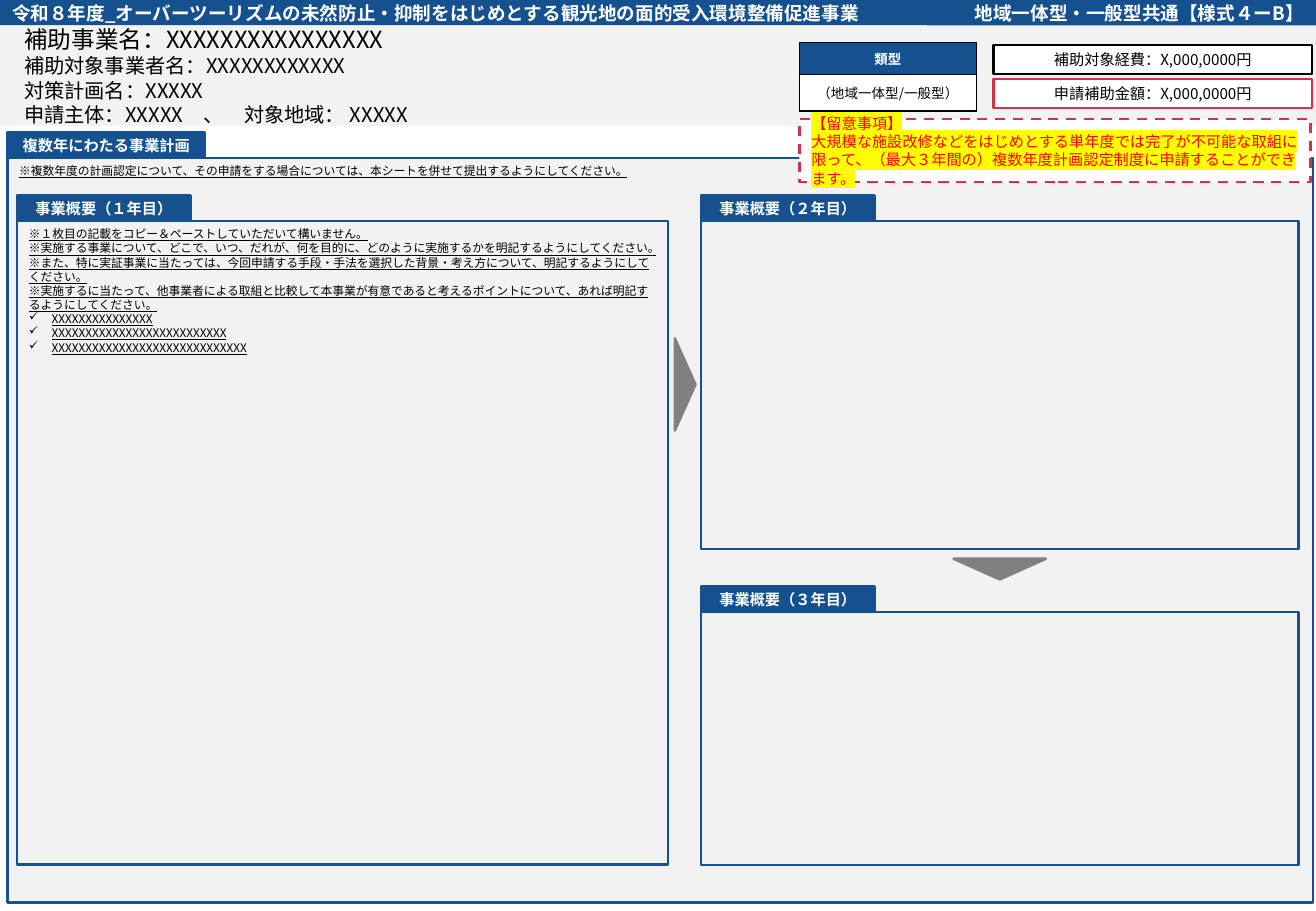
"""Build the multi-year project plan form as a single slide."""
from dataclasses import dataclass

from lxml import etree
from pptx import Presentation
from pptx.dml.color import RGBColor
from pptx.enum.dml import MSO_LINE
from pptx.enum.shapes import MSO_SHAPE
from pptx.enum.text import MSO_ANCHOR, MSO_AUTO_SIZE, PP_ALIGN
from pptx.oxml.ns import qn
from pptx.util import Pt

RECTANGLE, TRIANGLE = MSO_SHAPE.RECTANGLE, MSO_SHAPE.ISOSCELES_TRIANGLE
LEFT, CENTER, RIGHT = PP_ALIGN.LEFT, PP_ALIGN.CENTER, PP_ALIGN.RIGHT
TOP, MIDDLE = MSO_ANCHOR.TOP, MSO_ANCHOR.MIDDLE
NO_AUTOFIT, DASH = MSO_AUTO_SIZE.NONE, MSO_LINE.DASH


@dataclass(frozen=True)
class Theme:
    font: str = "Noto Sans CJK JP"
    navy: str = "14518E"
    panel: str = "F2F2F2"
    white: str = "FFFFFF"
    black: str = "000000"
    crimson: str = "D1314A"
    red: str = "FF0000"
    yellow: str = "FFFF00"
    arrow: str = "808080"
    lead: float = 14
    detail: float = 12
    header: float = 11
    label: float = 9
    table: float = 8
    note: float = 7
    leading: float = 1.2
    outline: float = 1.5


THEME = Theme()
deck = Presentation()
deck.slide_width, deck.slide_height = Pt(780), Pt(540)
slide = deck.slides.add_slide(deck.slide_layouts[5])


def write(frame, text, size=THEME.label, color=THEME.black, bold=False, underline=False,
          align=LEFT, first_indent=0, bullet=None, highlight=None, fixed_leading=True):
    """Append one formatted paragraph to a text frame."""
    paragraph = frame.add_paragraph() if frame.text else frame.paragraphs[0]
    paragraph.alignment = align
    if fixed_leading:
        paragraph.line_spacing = Pt(size * THEME.leading)
    properties = paragraph._p.get_or_add_pPr()
    if first_indent:
        properties.set("indent", str(Pt(first_indent)))
    if bullet:
        properties.set("marL", str(Pt(13.5)))
        properties.set("indent", str(Pt(-13.5)))
        etree.SubElement(properties, qn("a:buChar")).set("char", bullet)
    run = paragraph.add_run()
    run.text = text
    font = run.font
    font.size, font.bold, font.underline, font.name = Pt(size), bold, underline, THEME.font
    font.color.rgb = RGBColor.from_string(color)
    latin = run._r.rPr.find(qn("a:latin"))
    east_asian = etree.Element(qn("a:ea"), typeface=THEME.font)
    latin.addnext(east_asian)
    if highlight:
        marker = etree.Element(qn("a:highlight"))
        etree.SubElement(marker, qn("a:srgbClr")).set("val", highlight)
        latin.addprevious(marker)


def box(left, top, width, height, fill, line=None, line_width=THEME.outline,
        anchor=MIDDLE, kind=RECTANGLE):
    """Add a filled shape ready for text."""
    shape = slide.shapes.add_shape(kind, Pt(left), Pt(top), Pt(width), Pt(height))
    shape.shadow.inherit = False
    shape.fill.solid()
    shape.fill.fore_color.rgb = RGBColor.from_string(fill)
    if line:
        shape.line.color.rgb = RGBColor.from_string(line)
        shape.line.width = Pt(line_width)
    else:
        shape.line.fill.background()
    frame = shape.text_frame
    frame.word_wrap, frame.vertical_anchor = True, anchor
    frame.margin_top = frame.margin_bottom = Pt(3.6 if anchor == TOP else 0)
    return shape


band_height = 15.12
title = slide.shapes.title
title.left, title.top, title.width, title.height = Pt(0), Pt(0), Pt(780), Pt(band_height)
title.fill.solid()
title.fill.fore_color.rgb = RGBColor.from_string(THEME.navy)
title_frame = title.text_frame
title_frame.auto_size, title_frame.word_wrap = NO_AUTOFIT, True
title_frame.vertical_anchor = MIDDLE
title_frame.margin_top = title_frame.margin_bottom = Pt(0)
write(title_frame, "令和８年度_オーバーツーリズムの未然防止・抑制をはじめとする観光地の面的受入環境整備促進事業",
      size=THEME.header, color=THEME.white, bold=True)

form_name = box(550, 0, 230, band_height, THEME.navy, THEME.navy, 0.75)
write(form_name.text_frame, "地域一体型・一般型共通【様式４ーB】",
      size=THEME.header, color=THEME.white, bold=True, align=RIGHT)

applicant = box(0, band_height, 780, 59.76, THEME.panel)
for text, size in [
    ("補助事業名：XXXXXXXXXXXXXXXX", THEME.lead),
    ("補助対象事業者名：XXXXXXXXXXXX", THEME.detail),
    ("対策計画名：XXXXX", THEME.detail),
    ("申請主体：XXXXX　、　対象地域： XXXXX", THEME.detail),
]:
    write(applicant.text_frame, text, size=size, first_indent=7.2)

plan_notes = ["※複数年度の計画認定について、その申請をする場合については、本シートを併せて提出するようにしてください。"]
first_year_notes = [
    "※１枚目の記載をコピー＆ペーストしていただいて構いません。",
    "※実施する事業について、どこで、いつ、だれが、何を目的に、どのように実施するかを明記するようにしてください。",
    "※また、特に実証事業に当たっては、今回申請する手段・手法を選択した背景・考え方について、明記するようにしてください。",
    "※実施するに当たって、他事業者による取組と比較して本事業が有意であると考えるポイントについて、あれば明記するようにしてください。",
]
first_year_items = ["X" * count for count in (15, 26, 29)]

tab_height = 15.12
for heading, tab_width, left, top, width, height, notes, items in [
    ("複数年にわたる事業計画", 117.36, 4.32, 93.6, 774, 441.36, plan_notes, []),
    ("事業概要（１年目）", 102.96, 10.08, 131.04, 385.92, 381.6, first_year_notes, first_year_items),
    ("事業概要（２年目）", 102.96, 415.44, 131.04, 354.24, 194.4, [], []),
    ("事業概要（３年目）", 102.96, 415.44, 362.88, 354.24, 149.76, [], []),
]:
    section = box(left, top, width, height, THEME.panel, THEME.navy, anchor=TOP)
    for note in notes:
        write(section.text_frame, note, size=THEME.note, underline=True)
    for item in items:
        write(section.text_frame, item, size=THEME.note, underline=True, bullet="✓")
    tab = box(left, top - tab_height, tab_width, tab_height, THEME.navy, THEME.navy)
    write(tab.text_frame, heading, color=THEME.white, bold=True, align=CENTER)

for left, top, rotation in [(378.72, 221.76, 90), (565.2, 331.2, 180)]:
    next_year = box(left, top, 54.72, 12.24, THEME.arrow, THEME.arrow, kind=TRIANGLE)
    next_year.rotation = rotation

for text, top, outline in [
    ("補助対象経費：X,000,0000円", 26.64, THEME.black),
    ("申請補助金額：X,000,0000円", 46.8, THEME.crimson),
]:
    amount = box(588.96, top, 188.64, 17.28, THEME.white, outline)
    write(amount.text_frame, text, align=CENTER)

category = slide.shapes.add_table(2, 1, Pt(473.76), Pt(25.2), Pt(105.12), Pt(39.6)).table
category.first_row = category.horz_banding = False
for index, (text, height, fill, color, bold) in enumerate([
    ("類型", 18, THEME.navy, THEME.white, True),
    ("（地域一体型/一般型）", 21.6, THEME.white, THEME.black, False),
]):
    category.rows[index].height = Pt(height)
    cell = category.cell(index, 0)
    cell.vertical_anchor = MIDDLE
    cell.margin_left = cell.margin_right = Pt(0)
    cell.fill.solid()
    cell.fill.fore_color.rgb = RGBColor.from_string(fill)
    write(cell.text_frame, text, size=THEME.table, color=color, bold=bold, align=CENTER,
          fixed_leading=False)
    for position, side in enumerate(("lnL", "lnR", "lnT", "lnB")):
        border = etree.Element(qn(f"a:{side}"), w=str(Pt(1)))
        border_fill = etree.SubElement(border, qn("a:solidFill"))
        etree.SubElement(border_fill, qn("a:srgbClr")).set("val", THEME.black)
        cell._tc.get_or_add_tcPr().insert(position, border)

caution = box(473.76, 70.56, 303.12, 37.44, THEME.white, THEME.crimson)
caution.line.dash_style = DASH
for text in [
    "【留意事項】",
    "大規模な施設改修などをはじめとする単年度では完了が不可能な取組に限って、（最大３年間の）複数年度計画認定制度に申請することができます。",
]:
    write(caution.text_frame, text, color=THEME.red, highlight=THEME.yellow)

deck.save("out.pptx")
